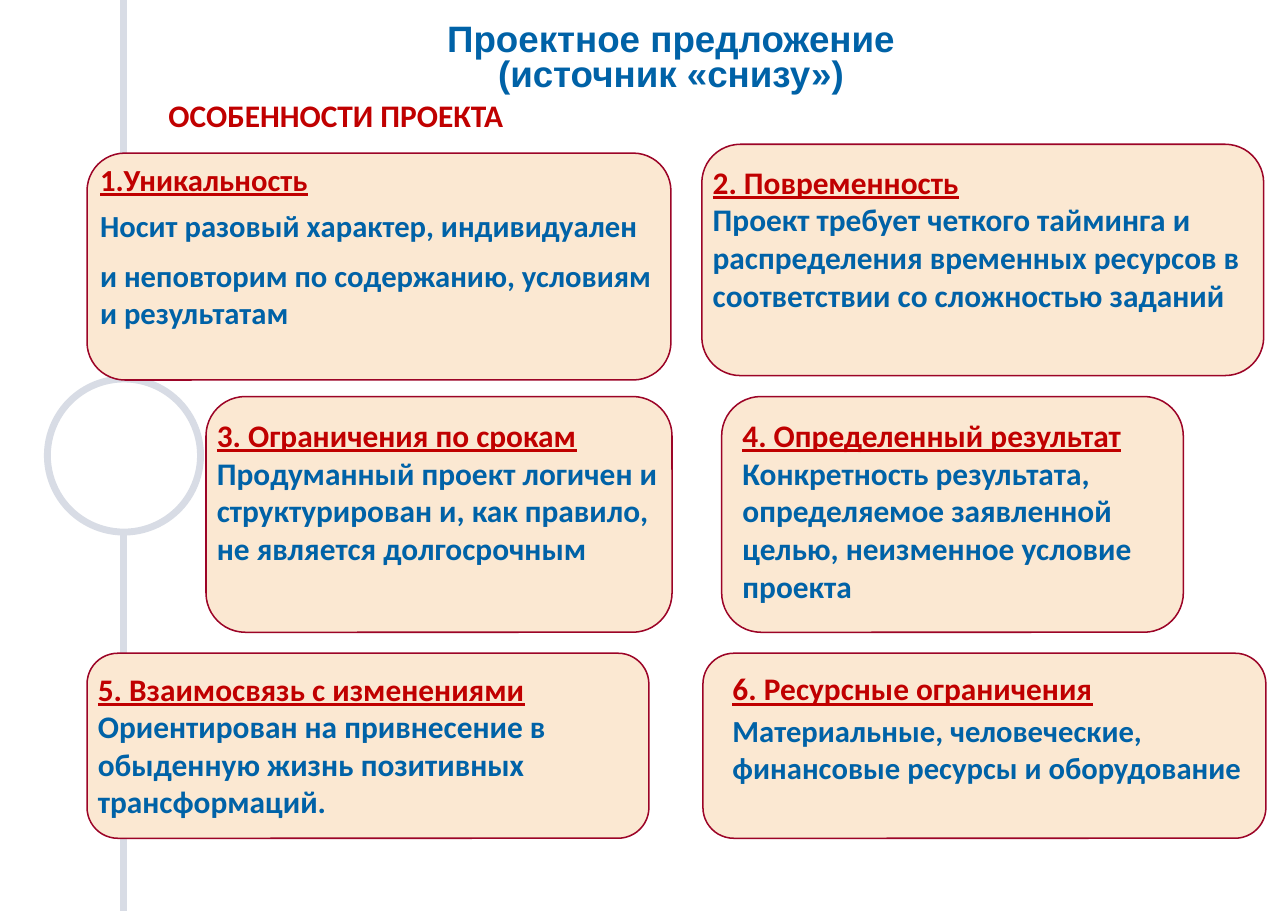
import dataclasses
import pptx
import pptx.dml.color
import pptx.enum.shapes
import pptx.enum.text
import pptx.util
from lxml import etree
from pptx.oxml.ns import qn

Inches = pptx.util.Inches
Kinds = pptx.enum.shapes.MSO_SHAPE
Align = pptx.enum.text.PP_ALIGN

BLUE = "0062A7"
RED = "C00000"
CREAM = "FBE8D2"
WINE = "9C0427"
GREY = "D8DCE5"
WHITE = "FFFFFF"

Area = tuple[float, float, float, float]


@dataclasses.dataclass
class Line:
    text: str
    color: str = BLUE
    size: float = 20.5
    font: str = "Calibri"
    under: bool = False
    align: Align = Align.LEFT
    before: float = 0
    after: float = 0
    pitch: float = 1.0


@dataclasses.dataclass
class Card:
    frame: Area
    area: Area
    head: str
    body: list[str]
    size: float = 20.5
    small: float = 20.5
    before: float = 0
    after: float = 0


CARDS = [
    Card((0.79, 1.39, 5.3, 2.06), (0.81, 1.41, 5.28, 1.99), "1.Уникальность",
         ["Носит разовый характер, индивидуален",
          "и неповторим по содержанию, условиям и результатам"], 20, 20, 6, 3),
    Card((6.37, 1.31, 5.1, 2.1), (6.37, 1.43, 5.11, 2.18), "2. Повременность",
         ["Проект требует четкого тайминга и распределения временных ресурсов "
          "в соответствии со сложностью заданий"]),
    Card((1.87, 3.6, 4.23, 2.14), (1.87, 3.73, 4.23, 1.83), "3. Ограничения по срокам",
         ["Продуманный проект логичен и структурирован и, как правило, "
          "не является долгосрочным"]),
    Card((6.55, 3.6, 4.19, 2.14), (6.64, 3.73, 4.28, 1.83), "4. Определенный результат",
         ["Конкретность результата, определяемое заявленной целью, "
          "неизменное условие проекта"]),
    Card((0.79, 5.93, 5.1, 1.68), (0.79, 6.03, 5.3, 1.48), "5. Взаимосвязь с изменениями",
         ["Ориентирован на привнесение в обыденную жизнь позитивных трансформаций."]),
    Card((6.38, 5.93, 5.11, 1.68), (6.55, 6.03, 4.94, 1.84), "6. Ресурсные ограничения",
         ["Материальные, человеческие, финансовые ресурсы и оборудование"],
         small=20, before=3),
]


def paint(part, color: str) -> None:
    if hasattr(part, "solid"):
        part.solid()
        part.fore_color.rgb = pptx.dml.color.RGBColor.from_string(color)
    else:
        part.color.rgb = pptx.dml.color.RGBColor.from_string(color)


def draw_shape(slide, kind: Kinds, area: Area, fill: str, edge: str, width: float) -> None:
    shape = slide.shapes.add_shape(kind, *map(Inches, area))
    shape.shadow.inherit = False
    paint(shape.fill, fill)
    paint(shape.line, edge)
    shape.line.width = pptx.util.Pt(width)


def draw_axis(slide, x: float, low: float, width: float) -> None:
    axis = slide.shapes.add_connector(
        pptx.enum.shapes.MSO_CONNECTOR.STRAIGHT,
        Inches(x), Inches(low), Inches(x), Inches(0))
    paint(axis.line, GREY)
    axis.line.width = pptx.util.Pt(width)
    etree.SubElement(axis._element.spPr, qn("a:effectLst"))


def draw_text(slide, area: Area, lines: list[Line]) -> None:
    frame = slide.shapes.add_textbox(*map(Inches, area)).text_frame
    frame.word_wrap = True
    for index, line in enumerate(lines):
        para = frame.add_paragraph() if index else frame.paragraphs[0]
        para.alignment = line.align
        para.line_spacing = line.pitch
        para.space_before = pptx.util.Pt(line.before)
        para.space_after = pptx.util.Pt(line.after)
        run = para.add_run()
        run.text = line.text
        run.font.name = line.font
        run.font.size = pptx.util.Pt(line.size)
        run.font.bold = True
        run.font.underline = line.under
        paint(run.font, line.color)


def draw_card(slide, card: Card) -> None:
    draw_shape(slide, Kinds.ROUNDED_RECTANGLE, card.frame, CREAM, WINE, 1)
    head = Line(card.head, RED, card.size, under=True)
    body = [Line(text, size=card.small, before=card.before, after=card.after)
            for text in card.body]
    draw_text(slide, card.area, [head, *body])


def main() -> None:
    deck = pptx.Presentation()
    deck.slide_width = Inches(11.69)
    deck.slide_height = Inches(8.27)
    slide = deck.slides.add_slide(deck.slide_layouts[6])
    paint(slide.background.fill, WHITE)
    draw_axis(slide, 1.12, 8.27, 4.5)
    draw_shape(slide, Kinds.OVAL, (0.43, 3.44, 1.39, 1.39), WHITE, GREY, 4.5)
    draw_text(slide, (1.43, 0.17, 9.32, 1.09), [
        Line(text, size=24, font="Arial", align=Align.CENTER, pitch=0.8)
        for text in ("Проектное предложение", "(источник «снизу»)")])
    draw_text(slide, (1.43, 0.82, 9.87, 0.45), [Line("ОСОБЕННОСТИ ПРОЕКТА", RED)])
    for card in CARDS:
        draw_card(slide, card)
    deck.save("out.pptx")


if __name__ == "__main__":
    main()
